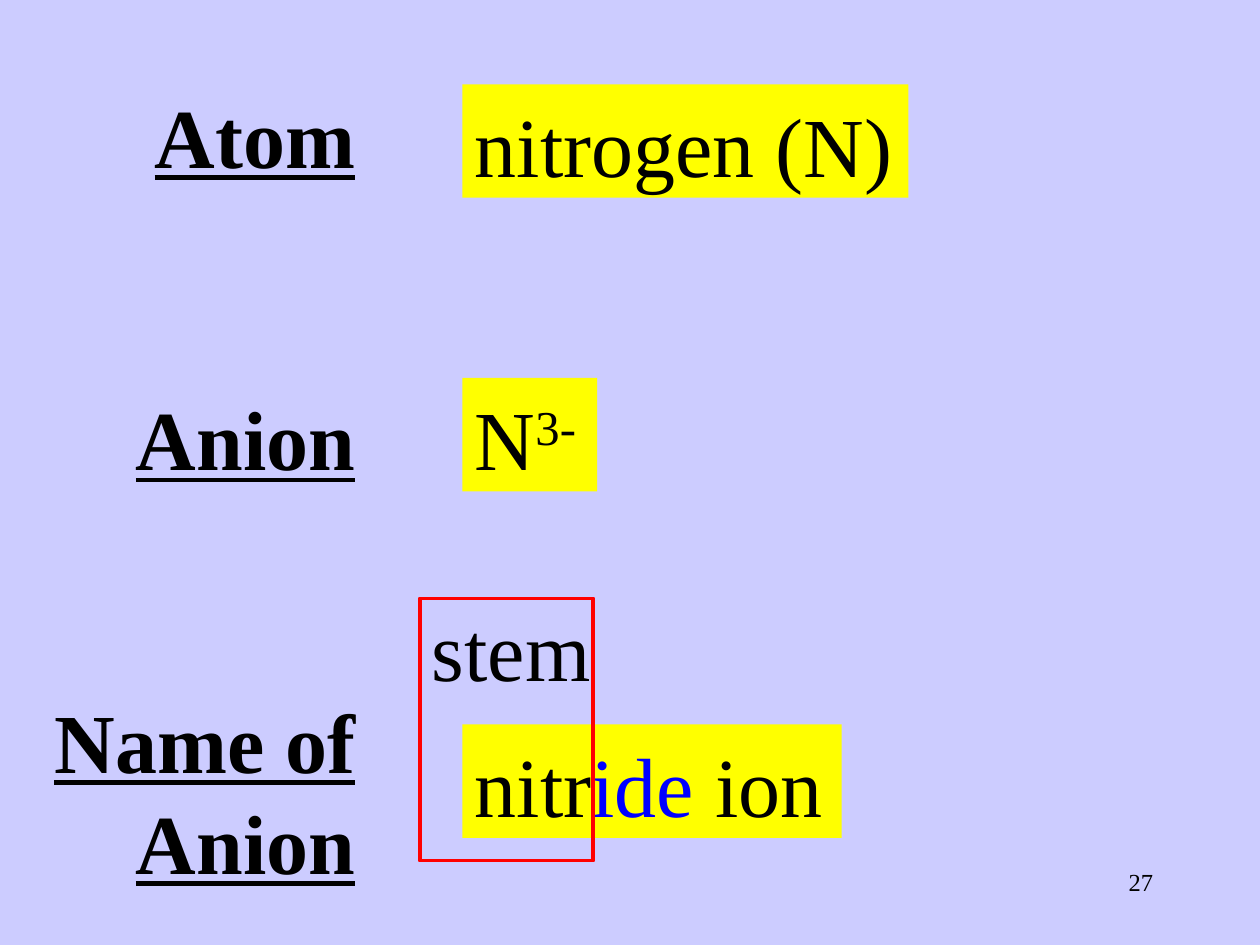
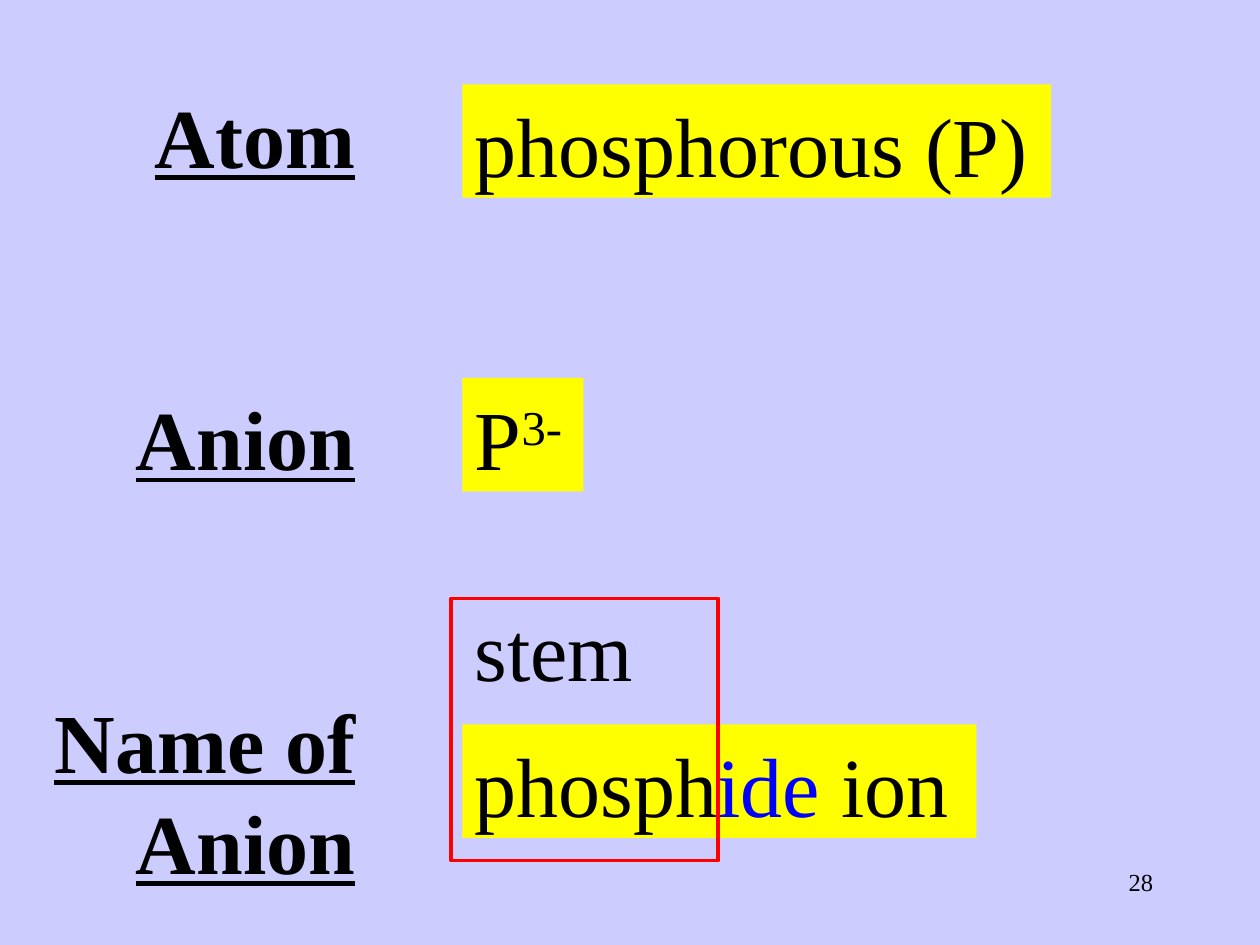
import pptx
import pptx.util
from lxml import etree
from pptx.dml.color import RGBColor
from pptx.enum.shapes import MSO_SHAPE
from pptx.enum.text import MSO_ANCHOR, MSO_AUTO_SIZE, PP_ALIGN
from pptx.oxml.ns import qn
from pptx.util import Inches

# Content: text is a list of (run, style); boxes give left and width
FIRST_NUMBER = 27
LABELS = ["Atom", "Anion", "Name of Anion"]
SLIDES = [
    {"atom": ("nitrogen (N)", 3.54), "ion": ("N", 1.07),
     "stem": ("nitr", 3.01), "stem_left": 3.33, "frame": (3.33, 1.38)},
    {"atom": ("phosphorous (P)", 4.67), "ion": ("P", 0.96),
     "stem": ("phosph", 4.08), "stem_left": 3.67, "frame": (3.58, 2.12)},
]

# Shared look
FONT = "Times New Roman"
BLACK, BLUE, RED = "000000", "0000FF", "FF0000"
YELLOW, LAVENDER = "FFFF00", "CCCCFF"
BIG, SMALL = 48, 14
LINE = 1.2
ANSWER_LEFT, ANSWER_HEIGHT = 3.67, 0.9
ANSWER_TOPS = (0.67, 3, 5.75)


def color(value):
    return RGBColor.from_string(value)


def style(p, size=BIG, align=PP_ALIGN.LEFT):
    p.alignment = align
    p.line_spacing = pptx.util.Pt(size * LINE)
    p.font.name = FONT
    p.font.size = pptx.util.Pt(size)
    p.font.color.rgb = color(BLACK)


def prepare(tf, top=0.07):
    tf.word_wrap = True
    tf.auto_size = MSO_AUTO_SIZE.NONE
    tf.vertical_anchor = MSO_ANCHOR.TOP
    tf.margin_left = tf.margin_right = Inches(0.1)
    tf.margin_top, tf.margin_bottom = Inches(top), 0


def add_text(shapes, left, top, width, runs, fill=None):
    box = shapes.add_textbox(Inches(left), Inches(top), Inches(width), Inches(ANSWER_HEIGHT))
    if fill:
        box.fill.solid()
        box.fill.fore_color.rgb = color(fill)
    prepare(box.text_frame)
    p = box.text_frame.paragraphs[0]
    style(p)
    for text, look in runs:
        r = p.add_run()
        r.text = text
        if look == "super":
            r.font._element.set("baseline", "30000")
        elif look:
            r.font.color.rgb = color(look)


def add_number(s, number):
    box = s.shapes.add_textbox(Inches(7.17), Inches(6.83), Inches(2.08), Inches(0.5))
    prepare(box.text_frame, 0.05)
    p = box.text_frame.paragraphs[0]
    style(p, SMALL, PP_ALIGN.RIGHT)
    field = etree.SubElement(p._p, qn("a:fld"), type="slidenum",
                             id="{B6F15528-21DE-4FAA-801E-634DDDAF4B2B}")
    etree.SubElement(field, qn("a:rPr"), lang="en-US")
    etree.SubElement(field, qn("a:t")).text = str(number)


def add_labels(s):
    title = s.shapes.title
    title.left, title.top = 0, 0
    title.width, title.height = Inches(2.92), Inches(7.5)
    tf = title.text_frame
    prepare(tf, 0.67)
    for i, label in enumerate(LABELS):
        p = tf.paragraphs[0] if i == 0 else tf.add_paragraph()
        p.text = label
        style(p, align=PP_ALIGN.RIGHT)
        p.font.bold = p.font.underline = True
        # two empty lines' worth of space between labels
        p.space_before = pptx.util.Pt(2 * BIG * LINE if i else 0)


def add_stem(s, text_left, frame):
    group = s.shapes.add_group_shape()
    add_text(group.shapes, text_left, 4.67, 1.5, [("stem", None)])
    left, width = frame
    sp = group.shapes.add_shape(MSO_SHAPE.RECTANGLE, Inches(left), Inches(4.75),
                                Inches(width), Inches(2.08))
    sp.shadow.inherit = False
    sp.fill.background()
    sp.line.color.rgb = color(RED)
    sp.line.width = pptx.util.Pt(2.25)


def main():
    prs = pptx.Presentation()
    prs.slide_width, prs.slide_height = Inches(10), Inches(7.5)
    prs.element.set("firstSlideNum", str(FIRST_NUMBER))
    background = prs.slide_master.background.fill
    background.solid()
    background.fore_color.rgb = color(LAVENDER)

    for number, item in enumerate(SLIDES, FIRST_NUMBER):
        s = prs.slides.add_slide(prs.slide_layouts.get_by_name("Title Only"))
        add_labels(s)
        add_number(s, number)
        # Highlighted answers
        (atom, atom_w), (ion, ion_w), (stem, stem_w) = item["atom"], item["ion"], item["stem"]
        answers = [
            (atom_w, [(atom, None)]),
            (ion_w, [(ion, None), ("3-", "super")]),
            (stem_w, [(stem, None), ("ide", BLUE), (" ion", None)]),
        ]
        for top, (width, runs) in zip(ANSWER_TOPS, answers):
            add_text(s.shapes, ANSWER_LEFT, top, width, runs, YELLOW)
        add_stem(s, item["stem_left"], item["frame"])

    prs.save("out.pptx")


if __name__ == "__main__":
    main()
